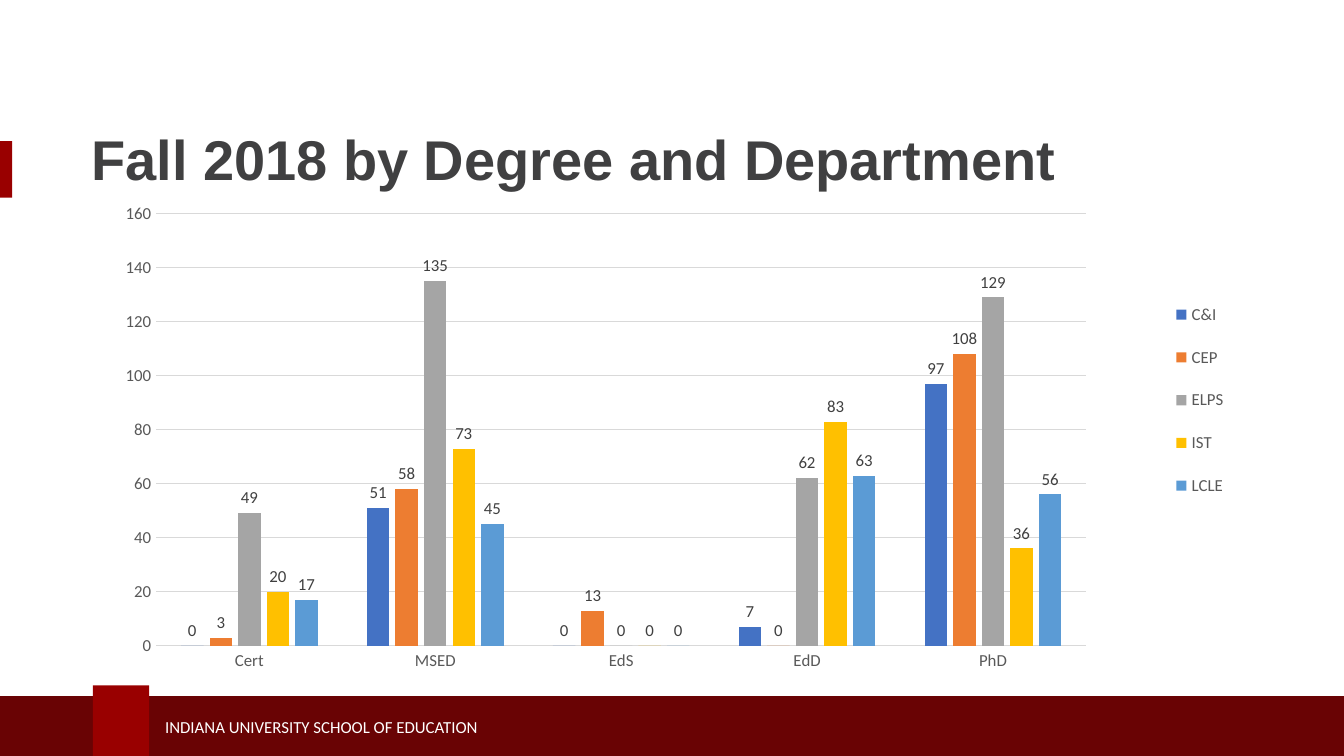
from pptx import Presentation
from pptx.chart.data import CategoryChartData
from pptx.dml.color import RGBColor
from pptx.enum.chart import XL_CHART_TYPE, XL_LABEL_POSITION, XL_LEGEND_POSITION, XL_TICK_MARK
from pptx.enum.shapes import MSO_SHAPE
from pptx.enum.text import MSO_ANCHOR, MSO_AUTO_SIZE, PP_ALIGN
from pptx.oxml import parse_xml
from pptx.oxml.ns import nsdecls, qn
from pptx.util import Inches, Pt

CLUSTERED = XL_CHART_TYPE.COLUMN_CLUSTERED
OUTSIDE_END = XL_LABEL_POSITION.OUTSIDE_END
LEGEND_RIGHT = XL_LEGEND_POSITION.RIGHT
NO_TICK = XL_TICK_MARK.NONE
RECTANGLE = MSO_SHAPE.RECTANGLE
MIDDLE = MSO_ANCHOR.MIDDLE
LEFT = PP_ALIGN.LEFT
NO_FIT = MSO_AUTO_SIZE.NONE

COLORS = {
    "crimson": "990000", "maroon": "690304", "white": "FFFFFF",
    "title": "404041", "label": "404040", "axis": "595959",
    "grid": "D9D9D9", "black": "000000",
    "C&I": "4472C4", "CEP": "ED7D31", "ELPS": "A5A5A5",
    "IST": "FFC000", "LCLE": "5B9BD5",
}
DEGREES = ["Cert", "MSED", "EdS", "EdD", "PhD"]
ENROLLMENT = {
    "C&I": [0, 51, 0, 7, 97],
    "CEP": [3, 58, 13, 0, 108],
    "ELPS": [49, 135, 0, 62, 129],
    "IST": [20, 73, 0, 83, 36],
    "LCLE": [17, 45, 0, 63, 56],
}


def rgb(name):
    return RGBColor.from_string(COLORS[name])


def format_font(font, size, color, name="Calibri", bold=False):
    font.size = Pt(size)
    font.name = name
    font.bold = bold
    font.color.rgb = rgb(color)


def write_text(shape, text, spacing=1.0, **font_format):
    frame = shape.text_frame
    frame.word_wrap = True
    frame.auto_size = NO_FIT
    frame.vertical_anchor = MIDDLE
    para = frame.paragraphs[0]
    para.alignment = LEFT
    para.line_spacing = spacing
    span = para.add_run()
    span.text = text
    format_font(span.font, **font_format)


def add_block(page, left, top, width, height, color):
    block = page.shapes.add_shape(
        RECTANGLE, Inches(left), Inches(top), Inches(width), Inches(height))
    block.shadow.inherit = False
    block.fill.solid()
    block.fill.fore_color.rgb = rgb(color)
    block.line.fill.background()


def add_footer(page, left, top, width, height):
    add_block(page, left, top, width, height, "maroon")
    add_block(page, left + 0.72, top - 0.08, 0.42, height + 0.08, "crimson")
    box = page.shapes.add_textbox(
        Inches(left + 1.16), Inches(top + 0.1), Inches(3.95), Inches(0.25))
    write_text(box, "INDIANA UNIVERSITY SCHOOL OF EDUCATION", size=9, color="white")


def add_title(page, left, top, width, height):
    add_block(page, 0, top + 0.22, 0.09, 0.42, "crimson")
    title = page.shapes.title
    title.left, title.top = Inches(left), Inches(top)
    title.width, title.height = Inches(width), Inches(height)
    write_text(title, "Fall 2018 by Degree and Department", spacing=0.9,
               size=30, color="title", name="Arial", bold=True)


def percent_layout(x, y, w, h, inner=False):
    target = '<c:layoutTarget val="inner"/>' if inner else ""
    return parse_xml(
        f'<c:layout {nsdecls("c")}><c:manualLayout>{target}'
        '<c:xMode val="edge"/><c:yMode val="edge"/>'
        f'<c:x val="{x / 100}"/><c:y val="{y / 100}"/>'
        f'<c:w val="{w / 100}"/><c:h val="{h / 100}"/>'
        '</c:manualLayout></c:layout>')


def style_line(line, color):
    line.color.rgb = rgb(color)
    line.width = Pt(0.75)


def style_axes(chart):
    for axis in (chart.category_axis, chart.value_axis):
        axis.major_tick_mark = NO_TICK
        axis.minor_tick_mark = NO_TICK
        format_font(axis.tick_labels.font, 9, "axis")
    style_line(chart.category_axis.format.line, "grid")
    values = chart.value_axis
    values.minimum_scale, values.maximum_scale, values.major_unit = 0, 160, 20
    values.format.line.fill.background()
    values.has_major_gridlines = True
    style_line(values.major_gridlines.format.line, "grid")


def style_columns(plot):
    plot.gap_width = 219
    plot.overlap = -27
    plot.vary_by_categories = False
    for series in plot.series:
        series.invert_if_negative = False
        series.format.fill.solid()
        series.format.fill.fore_color.rgb = rgb(series.name)
        labels = series.data_labels
        labels.show_value = True
        labels.position = OUTSIDE_END
        format_font(labels.font, 9, "label")


def add_enrollment_chart(page, left, top, width, height):
    data = CategoryChartData()
    data.categories = DEGREES
    for department, counts in ENROLLMENT.items():
        data.add_series(department, counts)
    chart = page.shapes.add_chart(
        CLUSTERED, Inches(left), Inches(top), Inches(width), Inches(height), data).chart
    chart.has_title = False
    format_font(chart.font, 10, "black")
    style_axes(chart)
    style_columns(chart.plots[0])

    chart.has_legend = True
    legend = chart.legend
    legend.position = LEGEND_RIGHT
    legend.include_in_layout = False
    format_font(legend.font, 9, "axis")

    root = chart.element
    for old in list(root.iter(qn("c:layout"))):
        old.getparent().remove(old)
    plot_area = next(root.iter(qn("c:plotArea")))
    plot_area.insert(0, percent_layout(4.6, 4.1, 80.8, 87.1, inner=True))
    legend_position = next(root.iter(qn("c:legendPos")))
    legend_position.addnext(percent_layout(91.8, 17.8, 7, 47.8))


def main():
    deck = Presentation()
    deck.slide_width = Inches(10)
    deck.slide_height = deck.slide_width * 9 // 16
    page = deck.slides.add_slide(deck.slide_layouts[5])
    add_footer(page, -0.03, 5.18, 10.09, 0.5)
    add_title(page, 0.58, 0.83, 8.75, 0.76)
    add_enrollment_chart(page, 0.77, 1.44, 8.56, 3.69)
    deck.save("out.pptx")


if __name__ == "__main__":
    main()
